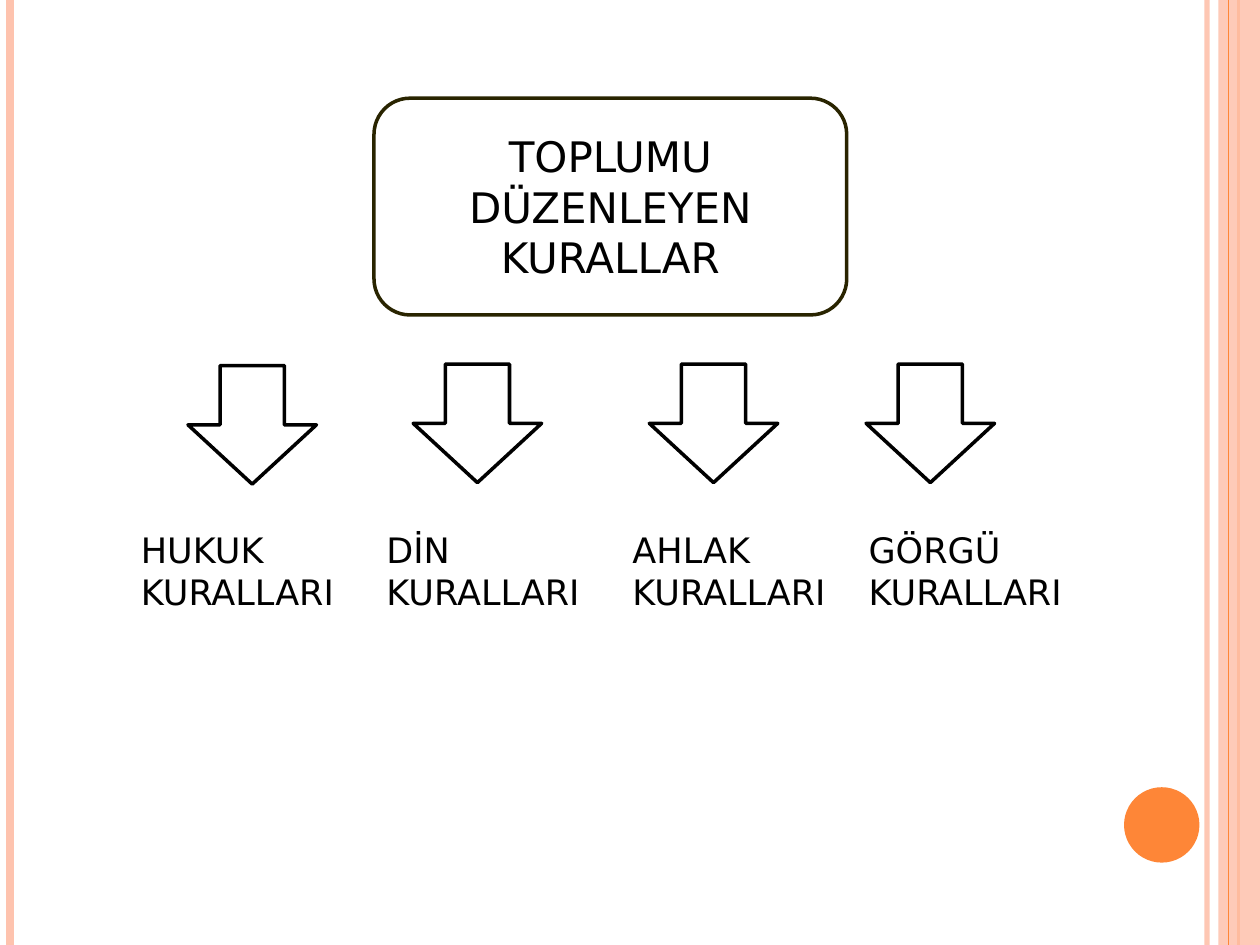
from lxml.etree import SubElement
from pptx import Presentation
from pptx.dml.color import RGBColor
from pptx.enum.shapes import MSO_CONNECTOR, MSO_SHAPE
from pptx.enum.text import MSO_ANCHOR, MSO_AUTO_SIZE, PP_ALIGN
from pptx.oxml.ns import qn
from pptx.util import Cm, Pt

WIDE, HIGH = 25.4, 19.05
PEACH, ORANGE, BLACK, WHITE = "FEC3AE", "FE8637", "000000", "FFFFFF"


def paint(form, color, alpha=100):
    """Give a fill or colour format a hex colour and an opacity in percent."""
    form.solid()
    form.fore_color.rgb = RGBColor.from_string(color)
    if alpha < 100:
        # The colour element has no public access from a fill
        hue = form._xPr.find(f"{qn('a:solidFill')}/{qn('a:srgbClr')}")
        SubElement(hue, qn("a:alpha")).set("val", str(alpha * 1000))


def apply(target, values):
    for name, value in values.items():
        setattr(target, name, value)


class Page:
    font = "DejaVu Sans"

    def __init__(self, slide):
        self.slide = slide
        self.shapes = slide.shapes

    def rule(self, x, color, width, alpha=100):
        """Full-height vertical line."""
        line = self.shapes.add_connector(
            MSO_CONNECTOR.STRAIGHT, Cm(x), Cm(0), Cm(x), Cm(HIGH))
        paint(line.line.fill, color, alpha)
        line.line.width = Pt(width)
        SubElement(line._element.spPr, qn("a:effectLst"))

    def shape(self, kind, box, fill, edge=None, alpha=100):
        item = self.shapes.add_shape(kind, *map(Cm, box))
        item.shadow.inherit = False
        paint(item.fill, fill, alpha)
        if edge:
            paint(item.line.fill, edge)
            item.line.width = Pt(2)
        else:
            item.line.fill.background()
        return item

    def letter(self, item, text, size, align, **frame):
        apply(item.text_frame, {"word_wrap": True, **frame})
        para = item.text_frame.paragraphs[0]
        apply(para, {"text": text, "alignment": align})
        apply(para.font, {"name": self.font, "size": Pt(size)})
        paint(para.font.fill, BLACK)

    def label(self, box, text):
        item = self.shapes.add_textbox(*map(Cm, box))
        self.letter(item, text, 20, PP_ALIGN.LEFT,
                    auto_size=MSO_AUTO_SIZE.SHAPE_TO_FIT_TEXT)


def main():
    deck = Presentation()
    apply(deck, {"slide_width": Cm(WIDE), "slide_height": Cm(HIGH)})
    page = Page(deck.slides.add_slide(deck.slide_layouts[6]))
    paint(page.slide.background.fill, WHITE)

    # Side stripes and corner disc
    page.rule(24.33, PEACH, 3, 93)
    page.rule(0.2, PEACH, 4.5)
    page.rule(24.97, ORANGE, 1.5)
    page.shape(MSO_SHAPE.RECTANGLE, (24.56, 0, 0.84, HIGH), PEACH, alpha=87)
    page.rule(24.76, ORANGE, 0.75)
    page.shape(MSO_SHAPE.OVAL, (22.66, 15.87, 1.52, 1.52), ORANGE)

    # Heading box
    head = page.shape(MSO_SHAPE.ROUNDED_RECTANGLE,
                      (7.54, 1.98, 9.53, 4.37), WHITE, "292400")
    page.letter(head, "TOPLUMU DÜZENLEYEN KURALLAR", 24, PP_ALIGN.CENTER,
                vertical_anchor=MSO_ANCHOR.MIDDLE)

    # Kinds of rules: word, arrow left and top, label left and width
    kinds = [
        ("HUKUK", 3.79, 7.37, 2.59, 4.57),
        ("DİN", 8.33, 7.34, 7.54, 4.78),
        ("AHLAK", 13.09, 7.34, 12.5, 4.95),
        ("GÖRGÜ", 17.46, 7.34, 17.26, 5.56),
    ]
    for word, x, y, left, width in kinds:
        page.shape(MSO_SHAPE.DOWN_ARROW, (x, y, 2.59, 2.39), WHITE, BLACK)
        page.label((left, 10.52, width, 1.96), f"{word} KURALLARI")

    deck.save("out.pptx")


if __name__ == "__main__":
    main()
